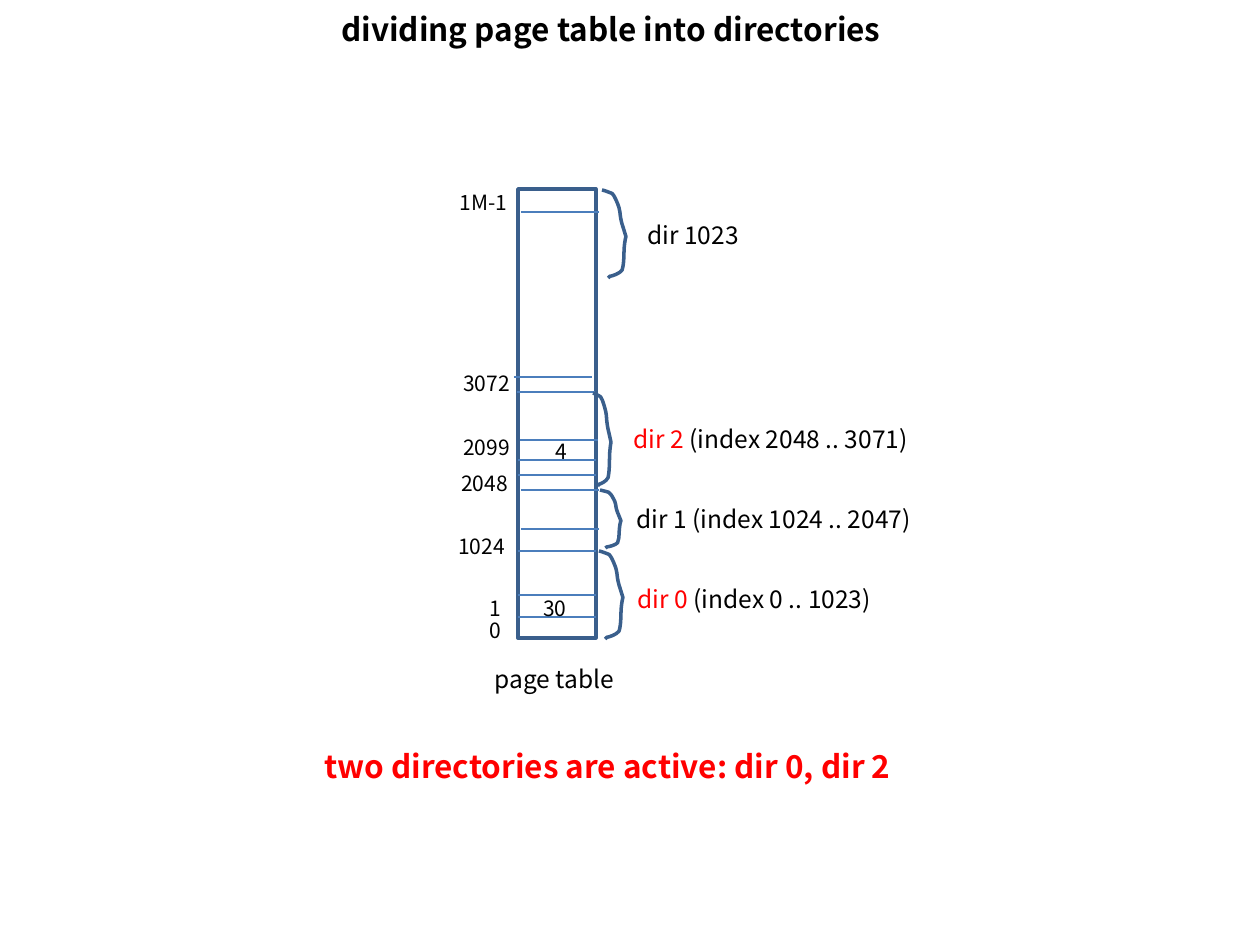
from dataclasses import dataclass
from lxml.etree import SubElement
from pptx import Presentation
from pptx.dml.color import RGBColor
from pptx.enum.shapes import MSO_CONNECTOR, MSO_SHAPE
from pptx.enum.text import MSO_ANCHOR, PP_ALIGN
from pptx.oxml.ns import qn
from pptx.util import Pt


@dataclass(frozen=True)
class Theme:
    font: str = "Noto Sans CJK KR"
    black: str = "000000"
    red: str = "FF0000"
    outline: str = "3A5F8C"
    rule: str = "4B7EBC"
    heading: int = 18
    body: int = 14
    label: int = 12
    thick: float = 2
    thin: float = 0.75


T = Theme()
PX = 914400 / 126  # EMU per px

# Content: boxes are left, top, width, height in px
TITLE = "dividing page table into directories"
SUMMARY = "two directories are active: dir 0, dir 2"
CAPTION = "page table"
TABLE = (518, 189, 78, 449)
ROW_LINES = [  # left, y
    (521, 212), (514, 377), (517, 392), (520, 440), (518, 460), (518, 475),
    (521, 490), (521, 529), (518, 551), (518, 595), (518, 617),
]
LABELS = [  # indexes and entries: text, left, top, width
    ("1M-1", 447, 183, 118), ("3072", 451, 364, 76), ("2099", 451, 428, 78),
    ("2048", 449, 464, 76), ("1024", 446, 527, 76), ("1", 477, 589, 42),
    ("0", 477, 611, 42), ("4", 543, 432, 78), ("30", 531, 589, 78),
]
DIRECTORIES = [  # coloured runs, text left/top/width, brace box
    ([("dir 1023", T.black)], (635, 214, 132), (602, 190, 24, 88)),
    ([("dir 2", T.red), (" (index 2048 .. 3071)", T.black)],
     (621, 418, 323), (593, 393, 18, 93)),
    ([("dir 1 (index 1024 .. 2047)", T.black)],
     (624, 498, 320), (600, 490, 21, 58)),
    ([("dir 0", T.red), (" (index 0 .. 1023)", T.black)],
     (625, 578, 289), (599, 551, 24, 88)),
]
# Brace curve in percent of its box: start, then three points per Bezier
BRACE = [
    (0, 0), (16, 1), (32, 3), (42, 4), (53, 7), (53, 9), (58, 11),
    (84, 27), (68, 23), (84, 39), (89, 43), (100, 53), (100, 53),
    (100, 54), (95, 57), (95, 60), (89, 70), (95, 81), (84, 91),
    (79, 94), (68, 94), (58, 96), (21, 100), (42, 96), (26, 100),
]


def emu(*values):
    return [round(v * PX) for v in values]


def style_line(shape, color, width):
    shape.line.color.rgb = RGBColor.from_string(color)
    shape.line.width = Pt(width)


def style_outline(sp):
    sp.shadow.inherit = False
    sp.fill.background()
    style_line(sp, T.outline, T.thick)


def add_text(s, runs, box, size=T.body, color=T.black, bold=False,
             align=PP_ALIGN.LEFT, anchor=MSO_ANCHOR.TOP):
    tf = s.shapes.add_textbox(*emu(*box)).text_frame
    tf.word_wrap = True
    tf.vertical_anchor = anchor
    p = tf.paragraphs[0]
    p.alignment = align
    for text, tint in [(runs, color)] if isinstance(runs, str) else runs:
        r = p.add_run()
        r.text = text
        r.font.name = T.font
        r.font.size = Pt(size)
        r.font.bold = bold
        r.font.color.rgb = RGBColor.from_string(tint)


def add_rule(s, left, y, width):
    line = s.shapes.add_connector(
        MSO_CONNECTOR.STRAIGHT, *emu(left, y, left + width, y))
    style_line(line, T.rule, T.thin)
    SubElement(line._element.spPr, qn("a:effectLst"))


def curve_segments(sp):
    """Join every three straight segments into one cubic Bezier."""
    segments = list(sp._element.iter(qn("a:lnTo")))
    outline = segments[0].getparent()
    for i in range(0, len(segments), 3):
        curve = SubElement(outline, qn("a:cubicBezTo"))
        for segment in segments[i:i + 3]:
            curve.append(segment[0])
            outline.remove(segment)


def add_brace(s, left, top, width, height):
    points = [emu(left + x * width / 100, top + y * height / 100)
              for x, y in BRACE]
    builder = s.shapes.build_freeform(*points[0])
    builder.add_line_segments(points[1:], close=False)
    sp = builder.convert_to_shape()
    curve_segments(sp)
    style_outline(sp)


def main():
    prs = Presentation()
    prs.slide_width, prs.slide_height = emu(1260, 945)
    s = prs.slides.add_slide(prs.slide_layouts[6])

    # Heading
    add_text(s, TITLE, (44, -24, 1134, 105), size=T.heading, bold=True,
             align=PP_ALIGN.CENTER, anchor=MSO_ANCHOR.MIDDLE)

    # Page table with its rows
    style_outline(s.shapes.add_shape(MSO_SHAPE.RECTANGLE, *emu(*TABLE)))
    for left, y in ROW_LINES:
        add_rule(s, left, y, TABLE[2])
    for text, *place in LABELS:
        add_text(s, text, (*place, 38), size=T.label)
    add_text(s, CAPTION, (482, 658, 199, 43))

    # Directories with their braces
    for runs, place, brace in DIRECTORIES:
        add_text(s, runs, (*place, 43))
        add_brace(s, *brace)

    # Summary
    add_text(s, SUMMARY, (312, 741, 645, 50), size=T.heading,
             color=T.red, bold=True)

    prs.save("out.pptx")


if __name__ == "__main__":
    main()
